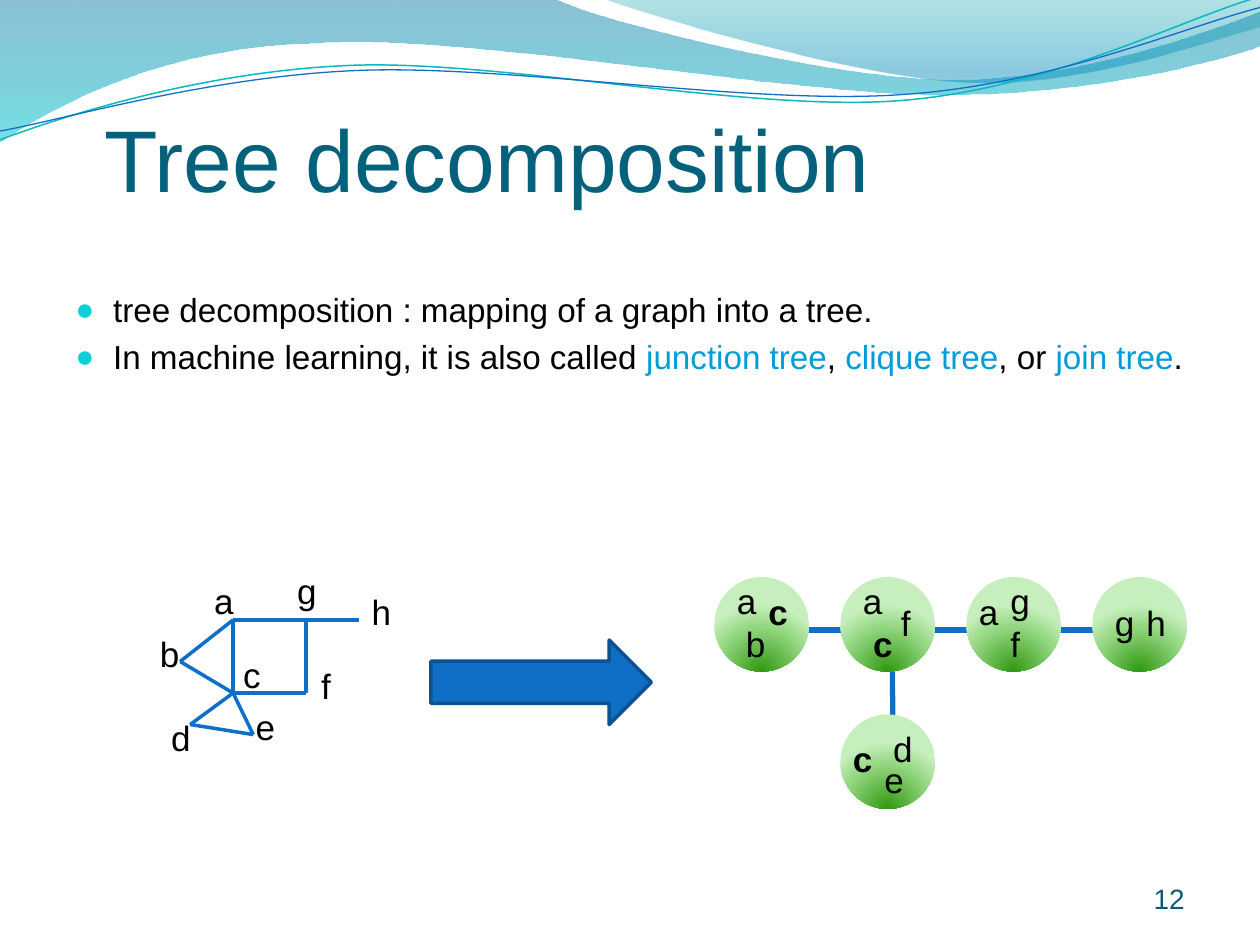
"""Build the tree decomposition slide."""
from pptx import Presentation, oxml, util as u
from pptx.dml.color import RGBColor
from pptx.enum import shapes, text
from pptx.oxml import ns

rgb = RGBColor.from_string
inch = u.Inches
space = ns.nsdecls("a")


def write(par, words, size, color="000000", bold=None):
    run = par.add_run()
    run.text = words
    font = run.font
    font.name, font.size, font.bold = "Arial", u.Pt(size), bold
    font.color.rgb = rgb(color)


def shade(shape, stops, mode):
    shape.fill.background()
    marks = "".join(
        f'<a:gs pos="{pos * 1000}"><a:srgbClr val="{color}">'
        f'<a:alpha val="{alpha * 1000}"/></a:srgbClr></a:gs>'
        for pos, color, alpha in stops)
    fill = oxml.parse_xml(f'<a:gradFill {space} rotWithShape="1">'
                          f'<a:gsLst>{marks}</a:gsLst>{mode}</a:gradFill>')
    props = shape._element.spPr
    props.replace(props.find(ns.qn("a:noFill")), fill)


deck = Presentation()
deck.slide_width, deck.slide_height = inch(10), inch(7.5)
slide = deck.slides.add_slide(deck.slide_layouts[6])
items = slide.shapes

down = '<a:lin ang="5400000" scaled="0"/>'
waves = [
    ([(0, 0), (4.4, -0.01), (4.76, 0.17, 6.64, 0.63, 7.58, 0.63),
      (8.53, 0.63, 9.58, 0.26, 10, 0.09), (10.01, 0.36),
      (9.83, 0.44, 8.7, 0.76, 7.46, 0.75),
      (6.22, 0.75, 3.82, 0.28, 2.57, 0.34),
      (1.29, 0.36, 0.46, 0.83, -0.01, 1.13)],
     [(0, "0074A1", 45), (100, "00C6CF", 55)], None, 0),
    ([(4.79, -0.01), (5.09, 0.11, 6.82, 0.62, 7.69, 0.65),
      (8.56, 0.69, 9.61, 0.32, 10, 0.21), (10, 0)],
     [(0, "00A1A9", 30), (80, "008BBF", 45)], None, 0),
    ([(0, 1.11), (0.48, 0.93, 1.58, 0.57, 2.77, 0.52),
      (3.95, 0.47, 5.93, 0.89, 7.13, 0.8),
      (8.33, 0.71, 9.38, 0.15, 9.98, -0.02)], None, "0AB8BF", 0.85),
    ([(0, 1.04), (0.47, 0.96, 1.64, 0.61, 2.83, 0.56),
      (4.03, 0.51, 5.97, 0.84, 7.17, 0.75),
      (8.36, 0.67, 9.41, 0.21, 10, 0.06)], None, "0F6FC6", 0.75),
]
for parts, stops, color, width in waves:
    dots = [(inch(part[i]), inch(part[i + 1]))
            for part in parts for i in range(0, len(part), 2)]
    pen = items.build_freeform(*dots[0])
    pen.add_line_segments(dots[1:], close=bool(stops))
    wave = pen.convert_to_shape()
    legs = iter(list(wave._element.iter(ns.qn("a:lnTo"))))
    for part in parts[1:]:
        leg = next(legs)
        if len(part) == 6:
            curve = oxml.parse_xml(f'<a:cubicBezTo {space}/>')
            leg.addprevious(curve)
            for piece in (leg, next(legs), next(legs)):
                curve.append(piece[0])
                piece.getparent().remove(piece)
    wave.shadow.inherit = False
    if stops:
        shade(wave, stops, down)
        wave.line.fill.background()
    else:
        wave.fill.background()
        wave.line.color.rgb = rgb(color)
        wave.line.width = u.Pt(width)

body = items.add_textbox(inch(0.5), inch(2.25), inch(9), inch(2.8)).text_frame
body.word_wrap = True
black, blue = "000000", "009DD9"
points = [
    [("tree decomposition : mapping of a graph into a tree.", black)],
    [("In machine learning, it is also called ", black), ("junction tree", blue),
     (", ", black), ("clique tree", blue), (", or ", black),
     ("join tree", blue), (".", black)],
]
for row, runs in enumerate(points):
    par = body.add_paragraph() if row else body.paragraphs[0]
    par.space_before = u.Pt(3.8)
    props = par._p.get_or_add_pPr()
    props.set("marL", str(inch(0.3)))
    props.set("indent", str(inch(-0.3)))
    for mark in (f'<a:buClr {space}><a:srgbClr val="0BD0D9"/></a:buClr>',
                 f'<a:buSzPct {space} val="95000"/>',
                 f'<a:buFont {space} typeface="Arial"/>',
                 f'<a:buChar {space} char="●"/>'):
        props.append(oxml.parse_xml(mark))
    for words, color in runs:
        write(par, words, 19, color)

graph = items.add_group_shape().shapes
arrow = items.add_shape(shapes.MSO_SHAPE.RIGHT_ARROW,
                        inch(3.42), inch(5.08), inch(1.75), inch(0.67))
arrow.shadow.inherit = False
arrow.fill.solid()
arrow.fill.fore_color.rgb = rgb("0F6FC6")
arrow.line.color.rgb = rgb("0B5292")
arrow.line.width = u.Pt(2)
tree = items.add_group_shape().shapes

a, b, c, d = (1.85, 4.92), (1.43, 5.25), (1.85, 5.5), (1.51, 5.75)
e, f, g, h = (2.01, 5.83), (2.43, 5.5), (2.43, 4.92), (2.85, 4.92)
edges = [(a, c), (g, f), (c, f), (a, g), (b, a), (b, c), (g, h), (c, d), (c, e), (d, e)]
links = [((7.08, 5), (7.09, 6.17)), ((6, 5), (9, 5))]
for group, pairs, width in ((graph, edges, 2), (tree, links, 3)):
    for start, end in pairs:
        edge = group.add_connector(shapes.MSO_CONNECTOR.STRAIGHT,
                                   *map(inch, start + end))
        edge.line.color.rgb = rgb("0F6FC6")
        edge.line.width = u.Pt(width)
        edge._element.spPr.append(oxml.parse_xml(f'<a:effectLst {space}/>'))

glow = ('<a:path path="circle"><a:fillToRect l="50000" t="130000" '
        'r="50000" b="-30000"/></a:path>')
greens = [(0, "319811", 100), (68, "95D882", 100), (100, "C6EFBD", 100)]
for x, y in ((5.67, 4.58), (6.67, 5.67), (6.67, 4.58), (7.67, 4.58), (8.67, 4.58)):
    bag = tree.add_shape(shapes.MSO_SHAPE.OVAL, inch(x), inch(y), inch(0.75), inch(0.75))
    bag.shadow.inherit = False
    bag.line.fill.background()
    shade(bag, greens, glow)

wide = dict(a=0.33, b=0.35, c=0.32, d=0.35, e=0.34, f=0.28, g=0.33, h=0.35)
names = [("b", 1.17, 5), ("d", 1.26, 5.67), ("e", 1.93, 5.58), ("g", 2.26, 4.5),
         ("c", 1.83, 5.17), ("f", 2.45, 5.25), ("h", 2.85, 4.67), ("a", 1.6, 4.58)]
sets = [("a", 5.75, 4.58), ("a", 6.75, 4.58), ("e", 6.92, 6), ("g", 7.92, 4.58),
        ("b", 5.82, 4.92), ("c", 6, 4.67), ("c", 6.83, 4.92), ("c", 6.67, 5.83),
        ("d", 6.99, 5.75), ("h", 9, 4.75), ("f", 7.05, 4.75), ("f", 7.92, 4.92),
        ("a", 7.67, 4.67), ("g", 8.75, 4.75)]
for group, marks in ((graph, names), (tree, sets)):
    for name, x, y in marks:
        label = group.add_shape(shapes.MSO_SHAPE.ROUNDED_RECTANGLE, inch(x), inch(y),
                                inch(wide[name]), inch(0.42))
        label.adjustments[0] = 0.005
        label.shadow.inherit = False
        label.fill.background()
        label.line.fill.background()
        frame = label.text_frame
        frame.word_wrap = False
        frame.auto_size = text.MSO_AUTO_SIZE.SHAPE_TO_FIT_TEXT
        frame.vertical_anchor = text.MSO_ANCHOR.TOP
        par = frame.paragraphs[0]
        par.alignment = text.PP_ALIGN.LEFT
        par.line_spacing = 0.93
        write(par, name, 20, bold=group is tree and name == "c")

page = items.add_textbox(inch(8.67), inch(6.95), inch(0.83), inch(0.4)).text_frame
page.word_wrap = True
page.paragraphs[0].alignment = text.PP_ALIGN.RIGHT
write(page.paragraphs[0], "12", 16, "045D75")

title = items.add_textbox(inch(0.83), inch(0.42), inch(9), inch(1.25)).text_frame
title.word_wrap = True
title.vertical_anchor = text.MSO_ANCHOR.BOTTOM
title.margin_left = title.margin_right = title.margin_bottom = 0
write(title.paragraphs[0], "Tree decomposition", 50, "04617B")

deck.save("out.pptx")
